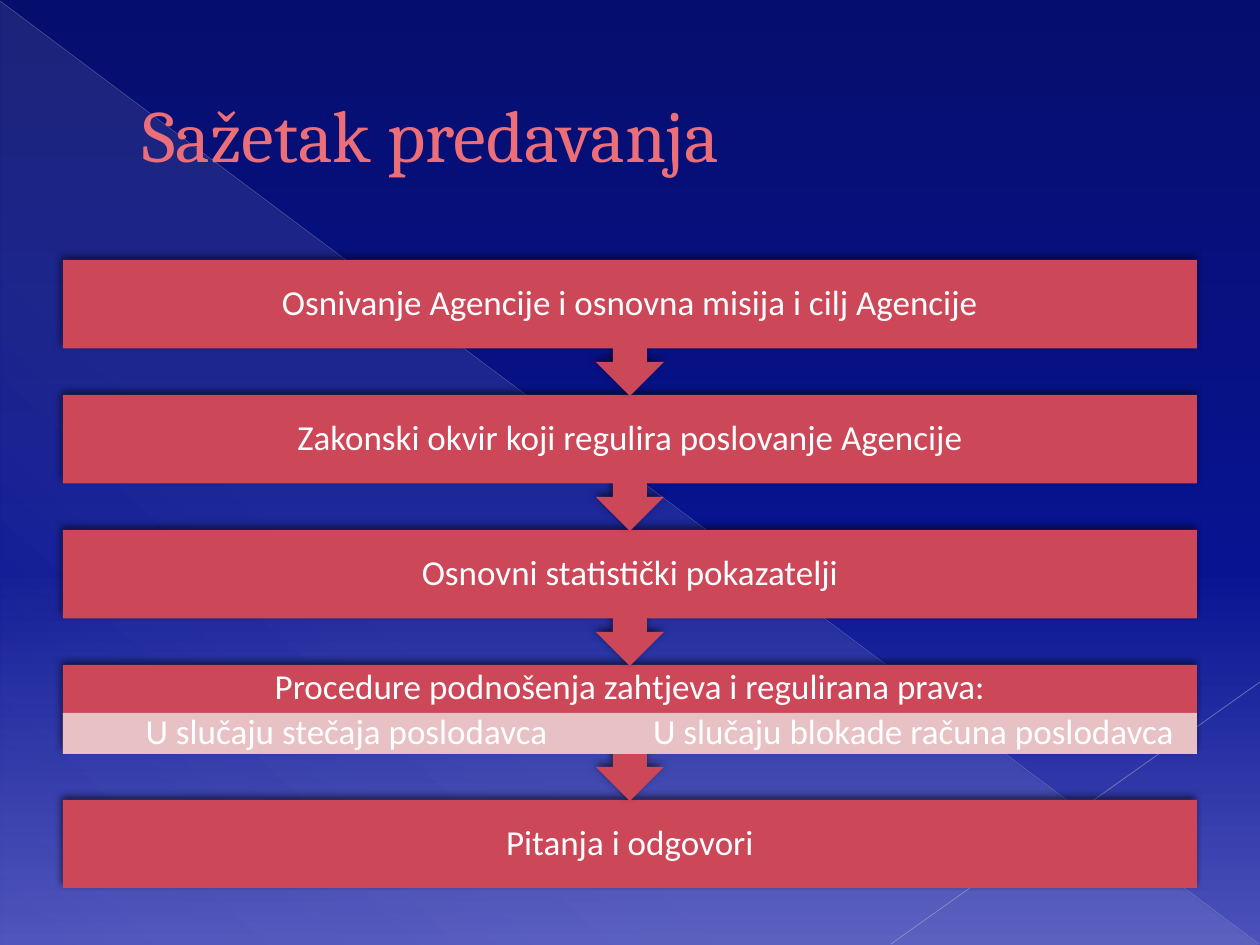
from lxml.etree import SubElement
from pptx import Presentation
from pptx.dml.color import RGBColor
from pptx.enum.shapes import MSO_CONNECTOR, MSO_SHAPE
from pptx.enum.text import MSO_ANCHOR, PP_ALIGN
from pptx.oxml import parse_xml
from pptx.oxml.ns import nsdecls, qn
from pptx.util import Pt

PX = 914400 / 126
WHITE = RGBColor(0xFF, 0xFF, 0xFF)
CORAL = RGBColor(0xEB, 0x6E, 0x78)
RED = RGBColor(0xCC, 0x47, 0x57)
PINK = RGBColor(0xEC, 0xCF, 0xD1)
NAVY = RGBColor(0x06, 0x0E, 0x6D)
BLUE = RGBColor(0x07, 0x13, 0x91)
VIOLET = RGBColor(0x4C, 0x52, 0xBA)
GREY = RGBColor(0xB1, 0xB2, 0xC7)
SILVER = RGBColor(0xBA, 0xBA, 0xCD)
SHADOW = (
    f'<a:effectLst {nsdecls("a")}><a:outerShdw blurRad="50800" dist="38100" '
    'dir="14700000" algn="tl" rotWithShape="0"><a:srgbClr val="000000">'
    '<a:alpha val="60000"/></a:srgbClr></a:outerShdw></a:effectLst>'
)


def set_gradient(fill, el, stops, angle):
    fill.gradient()
    fill.gradient_angle = 360 - angle
    gs_lst = next(el.iter(qn("a:gsLst")))
    for gs in list(gs_lst):
        gs_lst.remove(gs)
    for pos, color, alpha in stops:
        gs = SubElement(gs_lst, qn("a:gs"), pos=str(pos * 1000))
        clr = SubElement(gs, qn("a:srgbClr"), val=str(color))
        SubElement(clr, qn("a:alpha"), val=str(alpha * 1000))


def add_box(kind, x, y, w, h, color, text, bottom=0):
    sp = s.shapes.add_shape(kind, *[round(v * PX) for v in (x, y, w, h)])
    sp.shadow.inherit = False
    sp.fill.solid()
    sp.fill.fore_color.rgb = color
    sp.line.fill.background()
    tf = sp.text_frame
    frame = {"word_wrap": True, "vertical_anchor": MSO_ANCHOR.MIDDLE,
             "margin_left": round(20 * PX), "margin_right": round(20 * PX),
             "margin_top": 0, "margin_bottom": round(bottom * PX)}
    for name, value in frame.items():
        setattr(tf, name, value)
    p = tf.paragraphs[0]
    p.alignment = PP_ALIGN.CENTER
    p.line_spacing = 0.9
    r = p.add_run()
    r.text = text
    for name, value in {"name": "Calibri", "size": Pt(20)}.items():
        setattr(r.font, name, value)
    r.font.color.rgb = WHITE
    return sp


prs = Presentation()
prs.slide_width = round(1260 * PX)
prs.slide_height = round(945 * PX)
s = prs.slides.add_slide(prs.slide_layouts[5])
set_gradient(s.background.fill, s._element,
             [(0, NAVY, 100), (60, BLUE, 100), (100, VIOLET, 100)], 90)

sp = s.shapes.add_shape(MSO_SHAPE.RIGHT_TRIANGLE,
                        *[round(v * PX) for v in (1, 2, 1258, 943)])
sp.shadow.inherit = False
sp.line.fill.background()
set_gradient(sp.fill, sp._element,
             [(0, WHITE, 10), (70, WHITE, 8), (100, WHITE, 1)], 133)

for ends, color, width, alpha in [((0, 1, 1259, 944), GREY, 0.39, 35),
                                  ((1260, 682, 891, 944), SILVER, 0.47, 45)]:
    line = s.shapes.add_connector(MSO_CONNECTOR.STRAIGHT,
                                  *[round(v * PX) for v in ends])
    line.line.color.rgb = color
    line.line.width = Pt(width)
    clr = next(line._element.spPr.iter(qn("a:srgbClr")))
    SubElement(clr, qn("a:alpha"), val=str(alpha * 1000))
    SubElement(line._element.spPr, qn("a:effectLst"))

title = s.shapes.title
s.shapes._spTree.append(title._element)
place = {"left": 63, "top": 37, "width": 1134, "height": 193}
for name, value in place.items():
    setattr(title, name, round(value * PX))
title.text_frame.vertical_anchor = MSO_ANCHOR.MIDDLE
p = title.text_frame.paragraphs[0]
p.alignment = PP_ALIGN.LEFT
p._p.get_or_add_pPr().set("marL", str(round(67 * PX)))
r = p.add_run()
r.text = "Sažetak predavanja"
for name, value in {"name": "Cambria", "size": Pt(42)}.items():
    setattr(r.font, name, value)
r.font.color.rgb = CORAL

LEFT, TOP, WIDTH, PITCH = 63, 260, 1134, 135
HEAD, SUB = 48, 41
steps = [
    ("Osnivanje Agencije i osnovna misija i cilj Agencije", []),
    ("Zakonski okvir koji regulira poslovanje Agencije", []),
    ("Osnovni statistički pokazatelji", []),
    ("Procedure podnošenja zahtjeva i regulirana prava:",
     ["U slučaju stečaja poslodavca", "U slučaju blokade računa poslodavca"]),
    ("Pitanja i odgovori", []),
]
for i, (text, cases) in reversed(list(enumerate(steps))):
    last = i == len(steps) - 1
    kind = MSO_SHAPE.RECTANGLE if last else MSO_SHAPE.DOWN_ARROW_CALLOUT
    y = TOP + i * PITCH
    sp = add_box(kind, LEFT, y, WIDTH, 88 if last else 136, RED, text,
                 SUB if cases else 0)
    spPr = sp._element.spPr
    spPr.replace(spPr.find(qn("a:effectLst")), parse_xml(SHADOW))
    for j, case in enumerate(cases):
        w = WIDTH // len(cases)
        sp = add_box(MSO_SHAPE.RECTANGLE, LEFT + j * w, y + HEAD, w, SUB, PINK, case)
        clr = next(sp._element.spPr.iter(qn("a:srgbClr")))
        SubElement(clr, qn("a:alpha"), val="90000")

prs.save("out.pptx")
